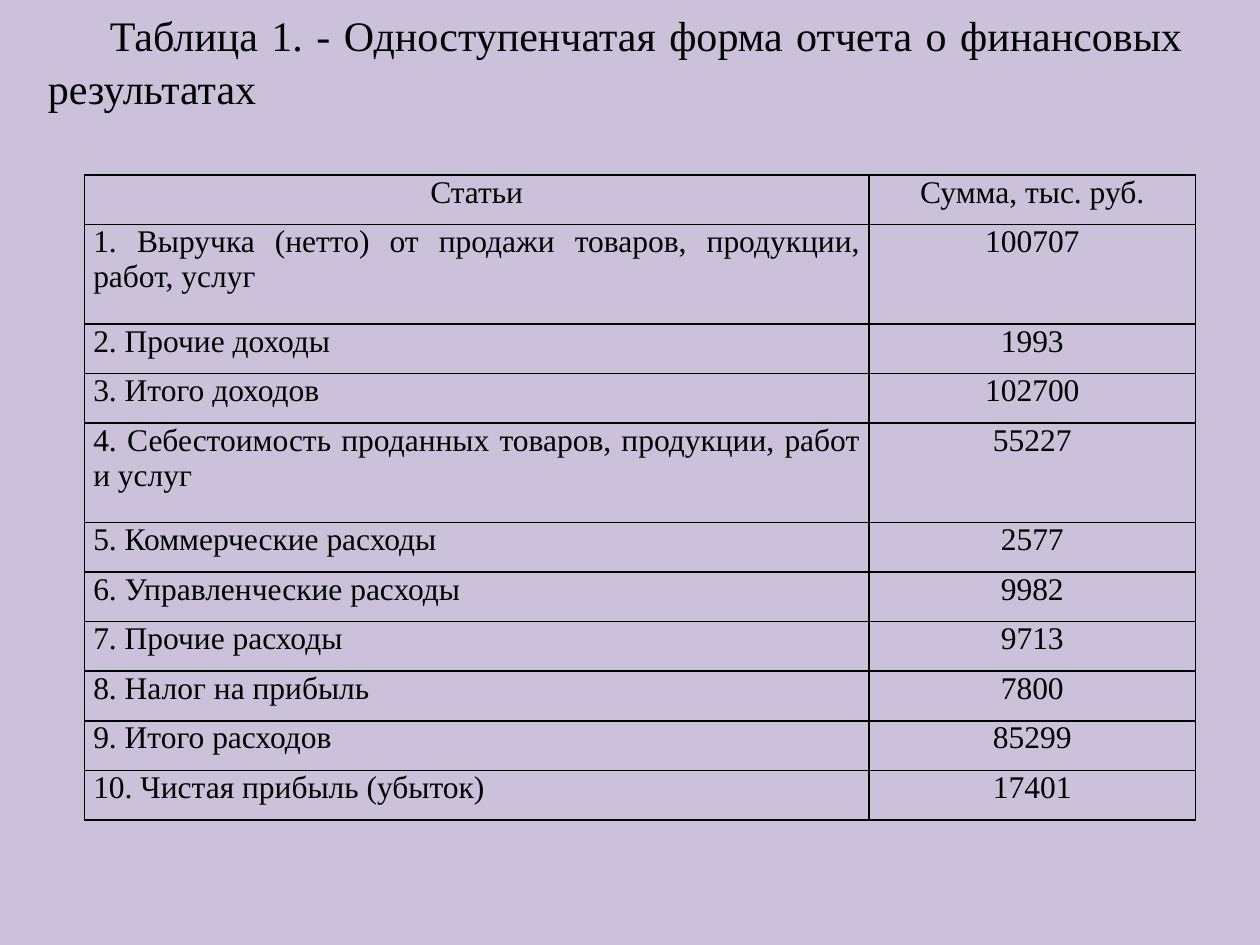
import pptx
import pptx.util
import pptx.dml.color
import pptx.enum.text
import pptx.oxml
import pptx.oxml.ns
import lxml.etree

Cm = pptx.util.Cm
Pt = pptx.util.Pt
ALIGN = pptx.enum.text.PP_ALIGN
LILAC = pptx.dml.color.RGBColor(0xCC, 0xC1, 0xDA)
BLACK = pptx.dml.color.RGBColor(0, 0, 0)
FONT = "Times New Roman"
ROWS = [
    ("Статьи", "Сумма, тыс. руб."),
    ("1. Выручка (нетто) от продажи товаров, продукции, работ, услуг", "100707"),
    ("2. Прочие доходы", "1993"),
    ("3. Итого доходов", "102700"),
    ("4. Себестоимость проданных товаров, продукции, работ и услуг", "55227"),
    ("5. Коммерческие расходы", "2577"),
    ("6. Управленческие расходы", "9982"),
    ("7. Прочие расходы", "9713"),
    ("8. Налог на прибыль", "7800"),
    ("9. Итого расходов", "85299"),
    ("10. Чистая прибыль (убыток)", "17401"),
]
TALL_ROWS = (1, 4)
COLUMN_WIDTHS = (Cm(15.82), Cm(6.58))
CELL_FORMAT = {
    "margin_left": Cm(0.18),
    "margin_right": Cm(0.18),
    "margin_top": 0,
    "margin_bottom": 0,
}
TITLE_PLACE = {"left": Cm(0.71), "top": Cm(0.05), "width": Cm(23.39), "height": Cm(2.31)}
TITLE_FRAME = {
    "word_wrap": True,
    "auto_size": pptx.enum.text.MSO_AUTO_SIZE.SHAPE_TO_FIT_TEXT,
    "vertical_anchor": pptx.enum.text.MSO_ANCHOR.MIDDLE,
}


def set_all(target, values):
    for name, value in values.items():
        setattr(target, name, value)


def write(para, text, size, alignment):
    para.alignment = alignment
    span = para.add_run()
    span.text = text
    set_all(span.font, {"name": FONT, "size": Pt(size)})
    span.font.color.rgb = BLACK


deck = pptx.Presentation()
deck.slide_width = Cm(25.4)
deck.slide_height = Cm(19.05)
page = deck.slides.add_slide(deck.slide_layouts[5])
page.background.fill.solid()
page.background.fill.fore_color.rgb = LILAC

title = page.shapes.title
set_all(title, TITLE_PLACE)
set_all(title.text_frame, TITLE_FRAME)
title.fill.solid()
title.fill.fore_color.rgb = LILAC
para = title.text_frame.paragraphs[0]
write(para, "Таблица 1. - Одноступенчатая форма отчета о финансовых результатах", 24, ALIGN.JUSTIFY)
para.line_spacing = 1.06
para._p.get_or_add_pPr().set("indent", str(Cm(1.25)))

table = page.shapes.add_table(
    len(ROWS), 2, Cm(1.7), Cm(3.53), sum(COLUMN_WIDTHS), Cm(13)
).table
set_all(table, {"first_row": False, "horz_banding": False})
for column, width in zip(table.columns, COLUMN_WIDTHS):
    column.width = width

for row_number, texts in enumerate(ROWS):
    table.rows[row_number].height = Cm(2 if row_number in TALL_ROWS else 1)
    for column_number, text in enumerate(texts):
        cell = table.cell(row_number, column_number)
        set_all(cell, CELL_FORMAT)
        is_item = row_number > 0 and column_number == 0
        write(cell.text_frame.paragraphs[0], text, 18, ALIGN.JUSTIFY if is_item else ALIGN.CENTER)
        properties = cell._tc.get_or_add_tcPr()
        for side in ("lnL", "lnR", "lnT", "lnB"):
            border = lxml.etree.SubElement(properties, pptx.oxml.ns.qn(f"a:{side}"), w=str(Pt(1)))
            fill = lxml.etree.SubElement(border, pptx.oxml.ns.qn("a:solidFill"))
            lxml.etree.SubElement(fill, pptx.oxml.ns.qn("a:srgbClr"), val=str(BLACK))
        cell.fill.background()

deck.save("out.pptx")
